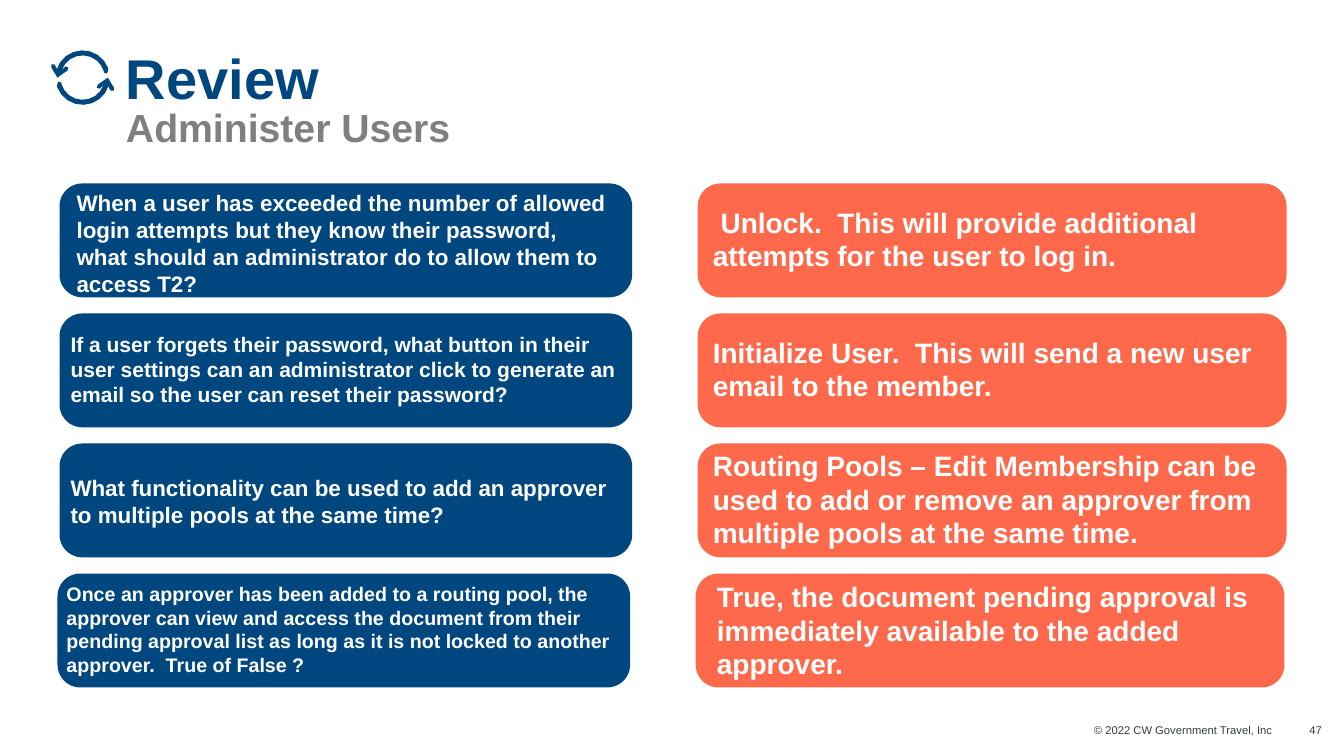
"""Build the Review slide on administering users."""
from math import cos, radians, sin

from pptx import Presentation
from pptx.dml.color import RGBColor
from pptx.enum.shapes import MSO_SHAPE
from pptx.enum.text import MSO_ANCHOR, PP_ALIGN
from pptx.util import Inches, Pt

NAVY = RGBColor(0x00, 0x46, 0x7F)
CORAL = RGBColor(0xFF, 0x69, 0x4B)
GRAY = RGBColor(0x7F, 0x7F, 0x7F)
SLATE = RGBColor(0x33, 0x3F, 0x48)
WHITE = RGBColor(0xFF, 0xFF, 0xFF)

deck = Presentation()
deck.slide_width, deck.slide_height = Inches(13.33), Inches(7.5)
slide = deck.slides.add_slide(deck.slide_layouts[6])
shapes = slide.shapes


def write(box, text, size, color, bold=True, align=PP_ALIGN.LEFT,
          anchor=MSO_ANCHOR.TOP):
    frame = box.text_frame
    frame.word_wrap = True
    frame.vertical_anchor = anchor
    frame.margin_left = frame.margin_right = 0
    frame.margin_top = frame.margin_bottom = 0
    line = frame.paragraphs[0]
    line.alignment = align
    run = line.add_run()
    run.text = text
    run.font.name, run.font.size, run.font.bold = "Arial", Pt(size), bold
    run.font.color.rgb = color
    return line


def arc(radius, start, stop, step):
    return [(radius * cos(radians(a)), -radius * sin(radians(a)))
            for a in range(start, stop, step)]


mid_x, mid_y = 0.82, 0.77
arrow = [(-0.25, 0), (-0.15, -0.07), (-0.14, -0.1), (-0.17, -0.11),
         (-0.21, -0.07)]
arrow += arc(0.22, 142, 12, -18)
arrow += [(0.21, -0.05), (0.24, -0.04), (0.25, -0.06)]
arrow += arc(0.27, 20, 165, 18)
arrow += [(-0.25, -0.08), (-0.28, -0.13), (-0.31, -0.13), (-0.31, -0.1)]
for turn in (1, -1):
    points = [(Inches(mid_x + turn * x), Inches(mid_y + turn * y))
              for x, y in arrow]
    pen = shapes.build_freeform(*points[0])
    pen.add_line_segments(points[1:], close=True)
    icon = pen.convert_to_shape()
    icon.shadow.inherit = False
    icon.fill.solid()
    icon.fill.fore_color.rgb = NAVY
    icon.line.fill.background()

title = shapes.add_textbox(Inches(1.25), Inches(0.53), Inches(11.53), Inches(0.92))
heading = write(title, "Review ", 40, NAVY)
heading.line_spacing = 0.85
heading.add_line_break()
write(title, "Administer Users", 28, GRAY)

top, mid = MSO_ANCHOR.TOP, MSO_ANCHOR.MIDDLE
asks = [
    ("When a user has exceeded the number of allowed login attempts but they "
     "know their password, what should an administrator do to allow them to "
     "access T2?", 16, top, 0.76, 1.88, 5.3),
    ("If a user forgets their password, what button in their user settings can "
     "an administrator click to generate an email so the user can reset their "
     "password?", 15, mid, 0.7, 3.1, 5.46),
    ("What functionality can be used to add an approver to multiple pools at "
     "the same time?", 16, mid, 0.7, 4.41, 5.46),
    ("Once an approver has been added to a routing pool, the approver can view "
     "and access the document from their pending approval list as long as it is "
     "not locked to another approver.  True of False ?", 14, mid, 0.66, 5.68, 5.5),
]
replies = [
    (" Unlock.  This will provide additional attempts for the user to log in.",
     20, mid, 7.07, 1.81, 5.7),
    ("Initialize User.  This will send a new user email to the member.",
     20, mid, 7.07, 3.1, 5.7),
    ("Routing Pools – Edit Membership can be used to add or remove an approver "
     "from multiple pools at the same time.", 20, mid, 7.07, 4.39, 5.7),
    ("True, the document pending approval is immediately available to the added "
     "approver.", 20, mid, 7.11, 5.69, 5.68),
]
shifts = [0, 0, 0, -0.02]
for x, width, color, cards in ((0.59, 5.68, NAVY, asks),
                               (6.92, 5.84, CORAL, replies)):
    for row, (text, size, anchor, left, y, span) in enumerate(cards):
        card = shapes.add_shape(
            MSO_SHAPE.ROUNDED_RECTANGLE, Inches(x + shifts[row]),
            Inches(1.82 + 1.29 * row), Inches(width), Inches(1.13))
        card.adjustments[0] = 0.2
        card.shadow.inherit = False
        card.fill.solid()
        card.fill.fore_color.rgb = color
        card.line.fill.background()
        box = shapes.add_textbox(Inches(left), Inches(y), Inches(span), Inches(1.12))
        write(box, text, size, WHITE, anchor=anchor)

for x, width, text in ((8.38, 4.24, "© 2022 CW Government Travel, Inc"),
                       (12.88, 0.23, "47")):
    foot = shapes.add_textbox(Inches(x), Inches(7.18), Inches(width), Inches(0.14))
    write(foot, text, 8, SLATE, bold=False, align=PP_ALIGN.RIGHT)

deck.save("out.pptx")
